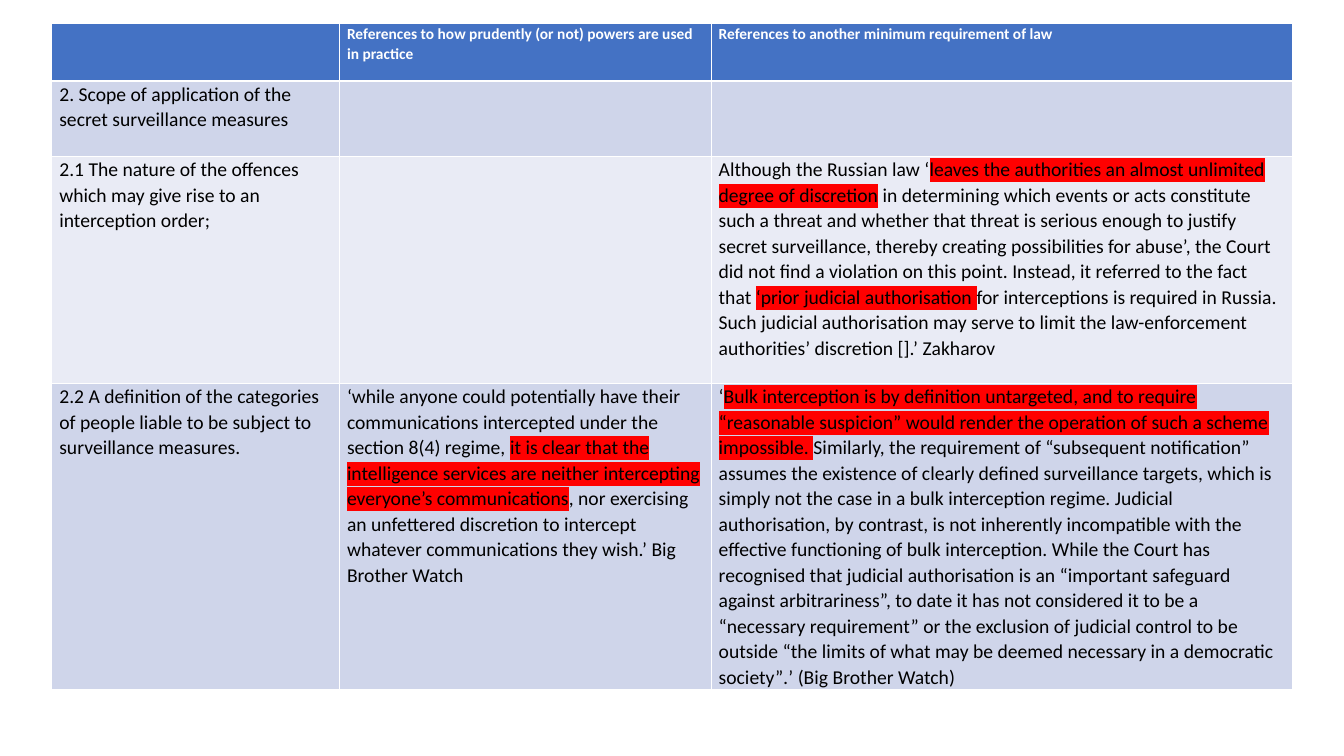
from lxml import etree
from pptx import Presentation
from pptx.dml.color import RGBColor
from pptx.oxml.ns import qn
from pptx.util import Pt

COLORS = {
    "header": "4472C4",
    "band_dark": "CFD5EA",
    "band_light": "E9EBF5",
    "header_text": "FFFFFF",
    "body_text": "000000",
    "highlight": "FF0000",
}
COLUMN_WIDTHS = [205.5, 265.5, 415]
ROW_HEIGHTS = [41, 54, 162, 218]
ROW_FILLS = ["header", "band_dark", "band_light", "band_dark"]
MARKED = {"highlight": "highlight"}

# Each cell is a list of (text, format) spans.
ROWS = [
    [
        [],
        [("References to how prudently (or not) powers are used in practice", {})],
        [("References to another minimum requirement of law", {})],
    ],
    [
        [("2. Scope of application of the secret surveillance measures", {})],
        [],
        [],
    ],
    [
        [("2.1 The nature of the offences which may give rise to an interception order;", {})],
        [],
        [
            ("Although the Russian law ‘", {}),
            ("leaves the authorities an almost unlimited degree of discretion", MARKED),
            (" in determining which events or acts constitute such a threat and whether "
             "that threat is serious enough to justify secret surveillance, thereby "
             "creating possibilities for abuse’, the Court did not find a violation on "
             "this point. Instead, it referred to the fact that ", {}),
            ("‘prior judicial authorisation ", MARKED),
            ("for interceptions is required in Russia. Such judicial authorisation may "
             "serve to limit the law-enforcement authorities’ discretion [].’ Zakharov", {}),
        ],
    ],
    [
        [("2.2 A definition of the categories of people liable to be subject to "
          "surveillance measures.", {})],
        [
            ("‘while anyone could potentially have their communications intercepted "
             "under the section 8(4) regime, ", {}),
            ("it is clear that the intelligence services are neither intercepting "
             "everyone’s communications", MARKED),
            (", nor exercising an unfettered discretion to intercept whatever "
             "communications they wish.’ Big Brother Watch", {}),
        ],
        [
            ("‘", {}),
            ("Bulk interception is by definition untargeted, and to require “reasonable "
             "suspicion” would render the operation of such a scheme impossible. ", MARKED),
            ("Similarly, the requirement of “subsequent notification” assumes the "
             "existence of clearly defined surveillance targets, which is simply not the "
             "case in a bulk interception regime. Judicial authorisation, by contrast, is "
             "not inherently incompatible with the effective functioning of bulk "
             "interception. While the Court has recognised that judicial "
             "authorisation is an “important safeguard against arbitrariness”, to date "
             "it has not considered it to be a “necessary requirement” or the exclusion "
             "of judicial control to be outside “the limits of what may be deemed "
             "necessary in a democratic society”", {}),
            (".", {"italic": True}),
            ("’ (Big Brother Watch)", {}),
        ],
    ],
]


def add_span(para, content, size, color, bold=False, italic=False, highlight=None):
    span = para.add_run()
    span.text = content
    font = span.font
    font.size, font.bold, font.italic = Pt(size), bold, italic
    font.color.rgb = RGBColor.from_string(COLORS[color])
    if highlight:
        # The highlight element must sit between the fill and the typeface.
        mark = etree.SubElement(span._r.get_or_add_rPr(), qn("a:highlight"))
        etree.SubElement(mark, qn("a:srgbClr"), val=COLORS[highlight])
    font.name = "Calibri"


deck = Presentation()
deck.slide_width, deck.slide_height = Pt(960), Pt(540)
page = deck.slides.add_slide(deck.slide_layouts[6])

table = page.shapes.add_table(
    len(ROW_HEIGHTS), len(COLUMN_WIDTHS),
    Pt(37), Pt(16.8), Pt(sum(COLUMN_WIDTHS)), Pt(sum(ROW_HEIGHTS)),
).table
for column, width in zip(table.columns, COLUMN_WIDTHS):
    column.width = Pt(width)

for row_index, (row, height) in enumerate(zip(table.rows, ROW_HEIGHTS)):
    row.height = Pt(height)
    if row_index == 0:
        base = {"size": 11, "color": "header_text", "bold": True}
    else:
        base = {"size": 14, "color": "body_text"}
    for cell, spans in zip(row.cells, ROWS[row_index]):
        cell.fill.solid()
        cell.fill.fore_color.rgb = RGBColor.from_string(COLORS[ROW_FILLS[row_index]])
        cell.margin_left = cell.margin_right = Pt(5.4)
        cell.margin_top = cell.margin_bottom = Pt(0)
        para = cell.text_frame.paragraphs[0]
        para.line_spacing = 1.07
        for content, style in spans:
            add_span(para, content, **base, **style)

deck.save("out.pptx")
